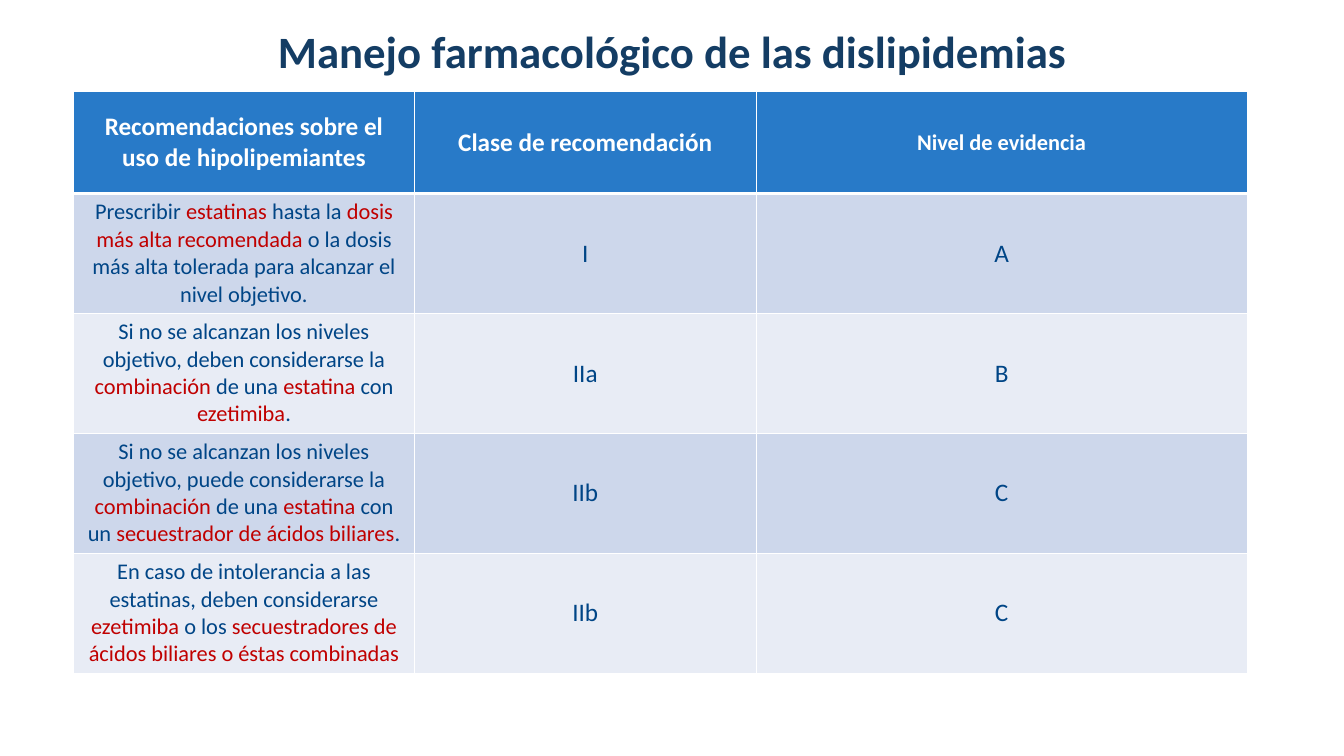
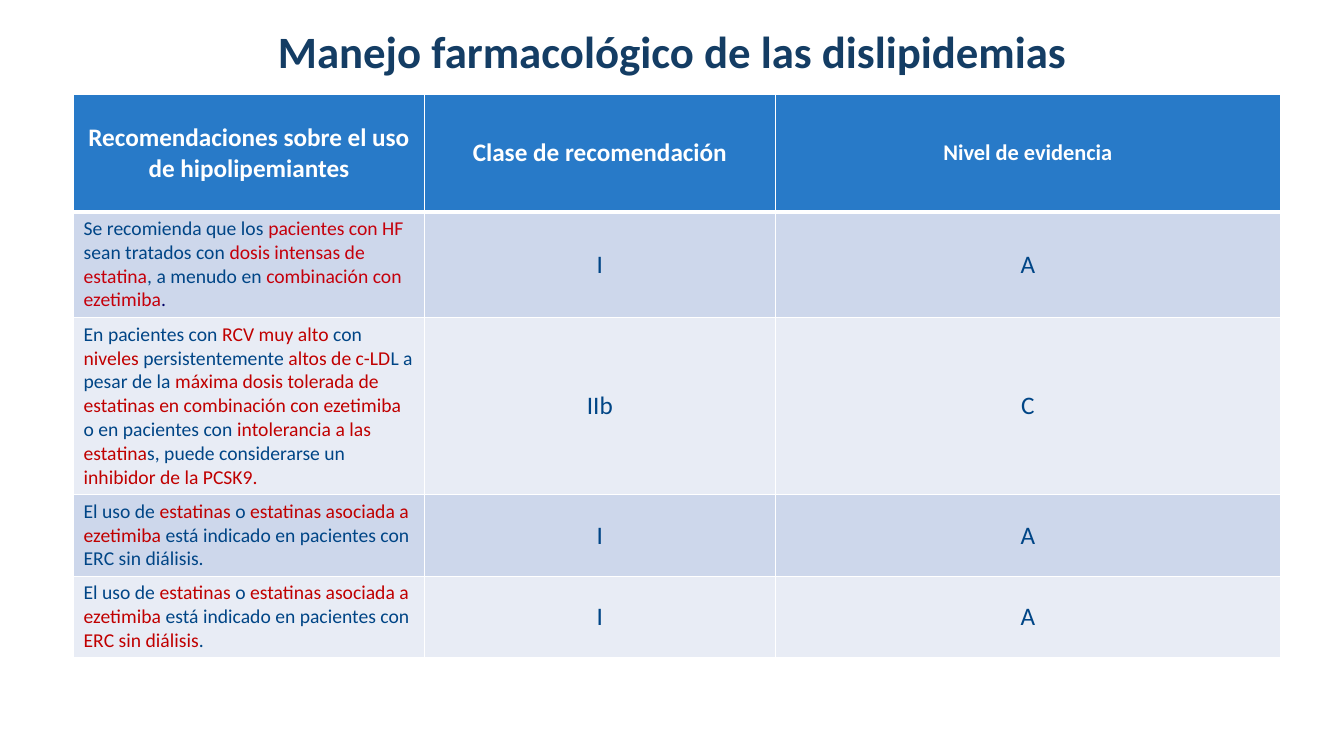
from lxml import etree
from pptx import Presentation, util as u
from pptx.dml.color import RGBColor
from pptx.enum import text
from pptx.oxml.ns import qn

COLORS = {
    "title": "143D64",
    "header": "287AC8",
    "band_dark": "CDD7EB",
    "band_light": "E8ECF5",
    "white": "FFFFFF",
    "body": "004586",
    "red": "C00000",
    "scarlet": "C5000B",
    "navy": "000066",
}
MARKS = {"*": "red", "^": "scarlet", "~": "navy"}
FONT = "Calibri"
CENTER, LEFT = text.PP_ALIGN.CENTER, text.PP_ALIGN.LEFT
MIDDLE, TOP = text.MSO_ANCHOR.MIDDLE, text.MSO_ANCHOR.TOP

TITLE = "Manejo farmacológico de las dislipidemias"
HEADERS = [
    ("Recomendaciones sobre el uso de hipolipemiantes", 18),
    ("Clase de recomendación", 18),
    ("Nivel de evidencia", 16),
]

# Segments are divided by "|"; a leading mark from MARKS sets the colour.
SLIDES = [
    {
        "top": 0.91, "cols": [3.38, 3.39, 4.87], "size": 16, "align": CENTER,
        "heights": [1.01, 1.19, 1.19, 1.19, 1.19],
        "rows": [
            ("Prescribir |*estatinas| hasta la |*dosis más alta recomendada"
             "| o la dosis más alta tolerada para alcanzar el nivel objetivo.",
             "I", "A"),
            ("Si no se alcanzan los niveles objetivo, deben considerarse la "
             "|*combinación| de una |*estatina| con |*ezetimiba|.",
             "IIa", "B"),
            ("Si no se alcanzan los niveles objetivo, puede considerarse la "
             "|*combinación| de una |*estatina| con un "
             "|*secuestrador de ácidos biliares|.",
             "IIb", "C"),
            ("En caso de intolerancia a las estatinas, deben considerarse "
             "|*ezetimiba| o los "
             "|*secuestradores de ácidos biliares o éstas combinadas",
             "IIb", "C"),
        ],
    },
    {
        "top": 0.94, "cols": [3.48, 3.48, 5.01], "size": 14, "align": LEFT,
        "heights": [1.16, 1.05, 1.75, 0.81, 0.81],
        "rows": [
            ("Se recomienda que los |^pacientes con HF |sean tratados con "
             "|^dosis intensas de estatina|, a menudo en "
             "|^combinación con ezetimiba|~.",
             "I", "A"),
            ("En pacientes con |*RCV muy alto |con |*niveles| persistentemente "
             "|*altos de c-LD|L a pesar de la |*máxima dosis tolerada de "
             "estatinas en combinación con ezetimiba |o en pacientes con "
             "|*intolerancia a las estatina|s, puede considerarse un "
             "|*inhibidor de la PCSK9.",
             "IIb", "C"),
            ("El uso de |*estatinas |o |*estatinas asociada a ezetimiba "
             "|está indicado en pacientes con ERC sin diálisis.",
             "I", "A"),
            ("El uso de |*estatinas |o |*estatinas asociada a ezetimiba "
             "|está indicado en pacientes con |*ERC sin diálisis|.",
             "I", "A"),
        ],
    },
]


def rgb(name):
    return RGBColor.from_string(COLORS[name])


def add_run(p, content, color, size, bold=False):
    r = p.add_run()
    r.text = content
    style = {"name": FONT, "size": u.Pt(size), "bold": bold}
    for key, value in style.items():
        setattr(r.font, key, value)
    r.font.color.rgb = rgb(color)


def add_marked_runs(p, content, size):
    """Write one run per segment, coloured by its leading mark."""
    for segment in content.split("|"):
        color = MARKS.get(segment[0], "body")
        add_run(p, segment.lstrip("".join(MARKS)), color, size)


def set_borders(cell, top=1, bottom=1):
    tc_pr = cell._tc.get_or_add_tcPr()
    for side, width in {"L": 1, "R": 1, "T": top, "B": bottom}.items():
        ln = etree.SubElement(tc_pr, qn(f"a:ln{side}"), w=str(u.Pt(width)))
        fill = etree.SubElement(ln, qn("a:solidFill"))
        etree.SubElement(fill, qn("a:srgbClr"), val=COLORS["white"])


def format_cell(cell, fill, align=CENTER, anchor=MIDDLE, **borders):
    """Style a cell and return its paragraph, ready for runs."""
    set_borders(cell, **borders)
    cell.fill.solid()
    cell.fill.fore_color.rgb = rgb(fill)
    cell.vertical_anchor = anchor
    p = cell.text_frame.paragraphs[0]
    p.alignment = align
    return p


def add_title(s):
    sp = s.shapes.title
    box = {"left": 0.67, "top": 0.17, "width": 12, "height": 0.66}
    for key, value in box.items():
        setattr(sp, key, u.Inches(value))
    tf = sp.text_frame
    tf.auto_size = text.MSO_AUTO_SIZE.NONE
    tf.vertical_anchor = MIDDLE
    p = tf.paragraphs[0]
    p.alignment = CENTER
    add_run(p, TITLE, "title", 32, bold=True)


def add_recommendations(s, top, cols, heights, rows, size, align):
    table = s.shapes.add_table(
        len(heights), len(cols), u.Inches(0.73), u.Inches(top),
        u.Inches(sum(cols)), u.Inches(sum(heights))).table
    for column, width in zip(table.columns, cols):
        column.width = u.Inches(width)
    for row, height in zip(table.rows, heights):
        row.height = u.Inches(height)

    for j, (label, header_size) in enumerate(HEADERS):
        p = format_cell(table.cell(0, j), "header", bottom=3)
        add_run(p, label, "white", header_size, bold=True)

    for i, (advice, *grades) in enumerate(rows, 1):
        band = "band_dark" if i % 2 else "band_light"
        top_line = 3 if i == 1 else 1
        p = format_cell(table.cell(i, 0), band, align, TOP, top=top_line)
        add_marked_runs(p, advice, size)
        for j, grade in enumerate(grades, 1):
            p = format_cell(table.cell(i, j), band, top=top_line)
            add_run(p, grade, "body", 18)


def main():
    prs = Presentation()
    prs.slide_width, prs.slide_height = u.Inches(13.33), u.Inches(7.5)
    for content in SLIDES:
        s = prs.slides.add_slide(prs.slide_layouts[5])
        add_title(s)
        add_recommendations(s, **content)
    prs.save("out.pptx")


if __name__ == "__main__":
    main()
